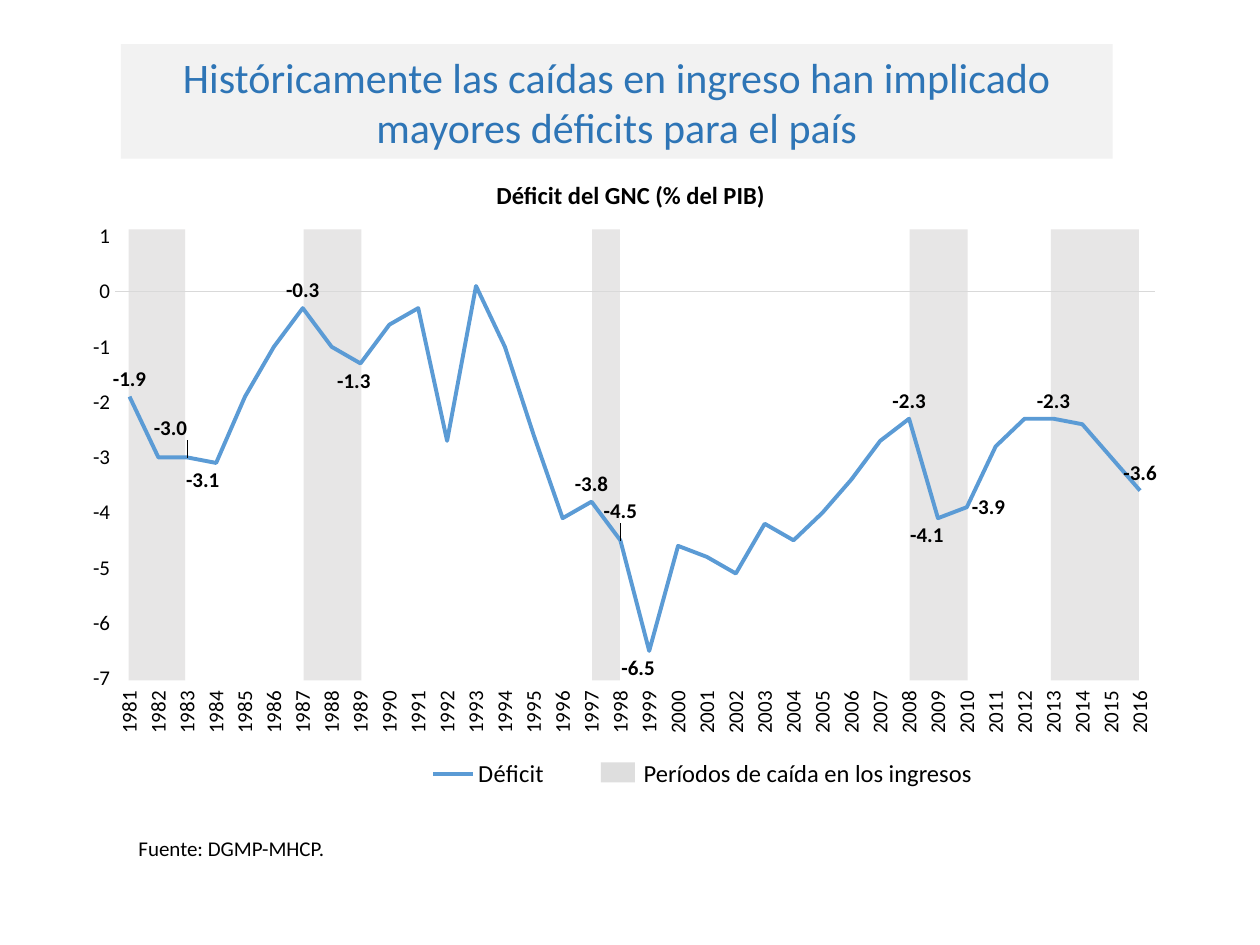
import pptx
import pptx.chart.data
import pptx.dml.color
import pptx.enum.chart
import pptx.enum.text
import pptx.oxml
import pptx.oxml.ns
import pptx.util
from pptx.enum.chart import XL_LABEL_POSITION as POS
from pptx.enum.text import MSO_ANCHOR, PP_ALIGN
from pptx.util import Inches

FONT = "Calibri"
BANDS = [(1.02, 0.45), (2.41, 0.46), (4.7, 0.22), (7.22, 0.46), (8.34, 0.7)]
FIRST_YEAR = 1981
DEFICIT = [
    -1.9, -3.0, -3.0, -3.1, -1.9, -1.0, -0.3, -1.0, -1.3,
    -0.6, -0.3, -2.7, 0.1, -1.0, -2.6, -4.1, -3.8, -4.5,
    -6.5, -4.6, -4.8, -5.1, -4.2, -4.5, -4.0, -3.4, -2.7,
    -2.3, -4.1, -3.9, -2.8, -2.3, -2.3, -2.4, -3.0, -3.6,
]
LABELS = {
    1981: (POS.ABOVE, 0, 0),
    1983: (POS.ABOVE, -0.015, -0.02),
    1984: (POS.BELOW, -0.012, 0),
    1987: (POS.ABOVE, 0, 0),
    1989: (POS.BELOW, -0.006, 0),
    1997: (POS.ABOVE, 0, 0),
    1998: (POS.ABOVE, 0, -0.02),
    1999: (POS.BELOW, -0.01, 0),
    2008: (POS.ABOVE, 0, 0),
    2009: (POS.BELOW, -0.01, 0),
    2010: (POS.RIGHT, 0, 0),
    2013: (POS.ABOVE, 0, 0),
    2016: (POS.ABOVE, 0, 0),
}


def rgb(color):
    return pptx.dml.color.RGBColor.from_string(color)


def write(sp, text, size=12, color="000000", bold=False,
          align=PP_ALIGN.LEFT, anchor=MSO_ANCHOR.TOP, wrap=True):
    tf = sp.text_frame
    tf.word_wrap = wrap
    tf.vertical_anchor = anchor
    p = tf.paragraphs[0]
    p.alignment = align
    r = p.add_run()
    r.text = text
    r.font.name = FONT
    r.font.size = pptx.util.Pt(size)
    r.font.bold = bold
    r.font.color.rgb = rgb(color)


def add_text(s, box, text, **style):
    write(s.shapes.add_textbox(*map(Inches, box)), text, **style)


def add_block(s, box, color, alpha=None):
    sp = s.shapes.add_shape(pptx.enum.shapes.MSO_SHAPE.RECTANGLE, *map(Inches, box))
    sp.shadow.inherit = False
    sp.fill.solid()
    sp.fill.fore_color.rgb = rgb(color)
    sp.line.fill.background()
    if alpha is not None:
        clr = sp.fill._xPr.find(".//" + pptx.oxml.ns.qn("a:srgbClr"))
        clr.append(pptx.oxml.parse_xml(
            f'<a:alpha {pptx.oxml.ns.nsdecls("a")} val="{alpha * 1000}"/>'))


def add_title(s, box, text):
    sp = s.shapes.title
    sp.left, sp.top, sp.width, sp.height = map(Inches, box)
    sp.fill.solid()
    sp.fill.fore_color.rgb = rgb("F2F2F2")
    write(sp, text, size=24, color="2E75B6", align=PP_ALIGN.CENTER,
          anchor=MSO_ANCHOR.MIDDLE)


def manual_layout(x, y, w=None, h=None, inner=False, edge=True):
    parts = ['<c:layoutTarget val="inner"/>'] if inner else []
    if edge:
        parts += ['<c:xMode val="edge"/>', '<c:yMode val="edge"/>']
    sizes = {"x": x, "y": y, "w": w, "h": h}
    parts += [f'<c:{k} val="{v}"/>' for k, v in sizes.items() if v is not None]
    return pptx.oxml.parse_xml(
        f'<c:layout {pptx.oxml.ns.nsdecls("c")}><c:manualLayout>'
        f'{"".join(parts)}</c:manualLayout></c:layout>')


def replace_layout(parent, layout, after=None):
    for old in parent.findall(pptx.oxml.ns.qn("c:layout")):
        parent.remove(old)
    if after is None:
        parent.insert(0, layout)
    else:
        parent.find(pptx.oxml.ns.qn(after)).addnext(layout)


def format_axes(chart):
    cat, val = chart.category_axis, chart.value_axis
    for axis in (cat, val):
        axis.major_tick_mark = pptx.enum.chart.XL_TICK_MARK.NONE
        axis.has_major_gridlines = False
    cat.tick_label_position = pptx.enum.chart.XL_TICK_LABEL_POSITION.LOW
    cat.format.line.color.rgb = rgb("D9D9D9")
    cat.format.line.width = pptx.util.Pt(0.75)
    cat.tick_labels.font.size = pptx.util.Pt(12)
    body = cat._element.find(
        pptx.oxml.ns.qn("c:txPr")).find(pptx.oxml.ns.qn("a:bodyPr"))
    body.set("rot", "-5400000")
    body.set("vert", "horz")
    val.minimum_scale, val.maximum_scale, val.major_unit = -7, 1, 1
    val.tick_labels.number_format = "0"
    val.tick_labels.number_format_is_linked = False
    val.format.line.fill.background()


def label_points(series):
    series.data_labels.show_value = False
    for year, (position, dx, dy) in LABELS.items():
        label = series.points[year - FIRST_YEAR].data_label
        label.font.bold = True
        label.font.size = pptx.util.Pt(12)
        label.position = position
        if dx or dy:
            dLbl = label._dLbl
            replace_layout(dLbl, manual_layout(dx, dy, edge=False), "c:idx")


def add_deficit_chart(s, box):
    data = pptx.chart.data.CategoryChartData(number_format="0.0")
    data.categories = [str(FIRST_YEAR + i) for i in range(len(DEFICIT))]
    data.add_series("Déficit", DEFICIT)
    chart = s.shapes.add_chart(
        pptx.enum.chart.XL_CHART_TYPE.LINE, *map(Inches, box), data).chart
    chart.has_title = False
    chart.font.name = FONT
    chart.font.size = pptx.util.Pt(12)
    chart.font.color.rgb = rgb("000000")
    chart.plots[0].vary_by_categories = False
    series = chart.plots[0].series[0]
    series.smooth = False
    series.format.line.color.rgb = rgb("5B9BD5")
    series.format.line.width = pptx.util.Pt(2.25)
    series.marker.style = pptx.enum.chart.XL_MARKER_STYLE.NONE
    format_axes(chart)
    label_points(series)
    chart.has_legend = True
    legend = chart.legend
    legend.position = pptx.enum.chart.XL_LEGEND_POSITION.RIGHT
    legend.include_in_layout = False
    legend.font.size = pptx.util.Pt(14)
    replace_layout(legend._element, manual_layout(0.31, 0.91, 0.13, 0.06),
                   "c:legendPos")
    plot_area = chart._chartSpace.chart.plotArea
    replace_layout(plot_area, manual_layout(0.042, 0.035, 0.927, 0.744, inner=True))


def main():
    prs = pptx.Presentation()
    prs.slide_width, prs.slide_height = Inches(10), Inches(7.5)
    s = prs.slides.add_slide(prs.slide_layouts[5])
    add_block(s, (4.77, 6.05, 0.27, 0.16), "C9C9C9", alpha=60)
    add_text(s, (5.01, 5.99, 3.45, 0.28), "Períodos de caída en los ingresos",
             size=14, anchor=MSO_ANCHOR.MIDDLE)
    add_text(s, (1, 6.58, 2.02, 0.3), "Fuente: DGMP-MHCP.")
    add_title(s, (0.96, 0.35, 7.87, 0.91),
              "Históricamente las caídas en ingreso han implicado "
              "mayores déficits para el país")
    add_text(s, (3.64, 1.38, 2.73, 0.34), "Déficit del GNC (% del PIB)",
             size=14, bold=True, align=PP_ALIGN.CENTER, wrap=False)
    for left, width in BANDS:
        add_block(s, (left, 1.82, width, 3.58), "E7E6E6")
    add_deficit_chart(s, (0.54, 1.71, 8.9, 4.72))
    prs.save("out.pptx")


if __name__ == "__main__":
    main()
